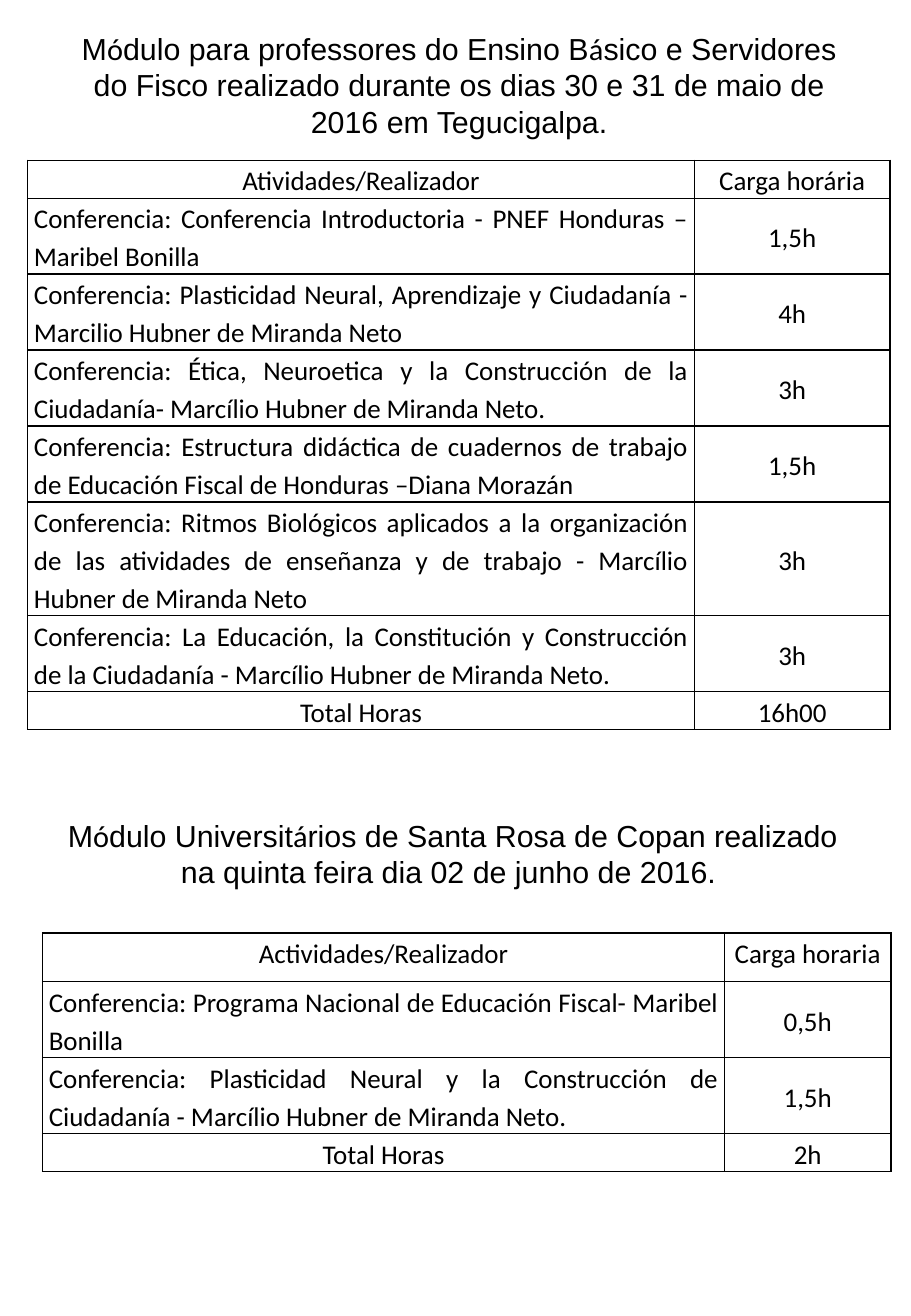
"""Build a page with two course-hour tables, each under its heading."""
from dataclasses import dataclass
from itertools import groupby

from lxml.etree import SubElement
from pptx import Presentation
from pptx.dml.color import RGBColor
from pptx.enum.text import MSO_ANCHOR, MSO_AUTO_SIZE, PP_ALIGN
from pptx.oxml.ns import qn
from pptx.util import Cm, Pt

BLACK = RGBColor(0, 0, 0)
HEADING_FONT, BODY_FONT = "Arial", "Calibri"
ACCENTED = "óá"
LINE_HEIGHT = 0.79


@dataclass
class Activity:
    text: str
    hours: str
    lines: int = 2


@dataclass
class Schedule:
    left: float
    top: float
    widths: tuple[float, float]
    header: tuple[str, str]
    header_height: float
    activities: list[Activity]
    total: str


MODULES = [
    Schedule(
        0.58, 3.35, (13.94, 4.09), ("Atividades/Realizador", "Carga horária"), LINE_HEIGHT,
        [
            Activity("Conferencia: Conferencia Introductoria - PNEF Honduras – Maribel Bonilla", "1,5h"),
            Activity("Conferencia: Plasticidad Neural, Aprendizaje y Ciudadanía - "
                     "Marcilio Hubner de Miranda Neto", "4h"),
            Activity("Conferencia: Ética, Neuroetica y la Construcción de la Ciudadanía- "
                     "Marcílio Hubner de Miranda Neto.", "3h"),
            Activity("Conferencia: Estructura didáctica de cuadernos de trabajo de "
                     "Educación Fiscal de Honduras –Diana Morazán", "1,5h"),
            Activity("Conferencia: Ritmos Biológicos aplicados a la organización de las atividades "
                     "de enseñanza y de trabajo - Marcílio Hubner de Miranda Neto", "3h", 3),
            Activity("Conferencia: La Educación, la Constitución y Construcción de la Ciudadanía - "
                     "Marcílio Hubner de Miranda Neto.", "3h"),
        ],
        "16h00",
    ),
    Schedule(
        0.89, 19.5, (14.26, 3.48), ("Actividades/Realizador", "Carga horaria"), 1.02,
        [
            Activity("Conferencia: Programa Nacional de Educación Fiscal- Maribel Bonilla", "0,5h"),
            Activity("Conferencia: Plasticidad Neural y la Construcción de Ciudadanía - "
                     "Marcílio Hubner de Miranda Neto.", "1,5h"),
        ],
        "2h",
    ),
]


def add_span(para, text: str, *, font: str, size: float) -> None:
    span = para.add_run()
    span.text = text
    span.font.name = font
    span.font.size = Pt(size)
    span.font.color.rgb = BLACK


def write_heading(box, text: str, *, left: float, top: float, width: float, height: float) -> None:
    box.left, box.top, box.width, box.height = Cm(left), Cm(top), Cm(width), Cm(height)
    frame = box.text_frame
    frame.word_wrap = True
    frame.auto_size = MSO_AUTO_SIZE.NONE
    frame.vertical_anchor = MSO_ANCHOR.MIDDLE
    para = frame.paragraphs[0]
    para.alignment = PP_ALIGN.CENTER
    for accented, letters in groupby(text, key=lambda letter: letter in ACCENTED):
        add_span(para, "".join(letters), font=BODY_FONT if accented else HEADING_FONT, size=18)


def add_borders(cell) -> None:
    properties = cell._tc.get_or_add_tcPr()
    for side in ("a:lnL", "a:lnR", "a:lnT", "a:lnB"):
        line = SubElement(properties, qn(side), w=str(Pt(1)))
        fill = SubElement(line, qn("a:solidFill"))
        SubElement(fill, qn("a:srgbClr"), val=str(BLACK))


def write_cell(cell, text: str, *, align=PP_ALIGN.CENTER, anchor=MSO_ANCHOR.TOP) -> None:
    add_borders(cell)
    cell.fill.background()
    cell.margin_left = cell.margin_right = Cm(0.13)
    cell.margin_top = cell.margin_bottom = 0
    cell.vertical_anchor = anchor
    para = cell.text_frame.paragraphs[0]
    para.alignment = align
    para.line_spacing = 1.15
    add_span(para, text, font=BODY_FONT, size=16)


def add_schedule(page, schedule: Schedule) -> None:
    heights = [schedule.header_height,
               *(activity.lines * LINE_HEIGHT for activity in schedule.activities), LINE_HEIGHT]
    table = page.shapes.add_table(
        len(heights), 2, Cm(schedule.left), Cm(schedule.top),
        Cm(sum(schedule.widths)), Cm(sum(heights))).table
    table.first_row = table.horz_banding = False
    for column, width in zip(table.columns, schedule.widths):
        column.width = Cm(width)
    for row, height in zip(table.rows, heights):
        row.height = Cm(height)
    for column, text in enumerate(schedule.header):
        write_cell(table.cell(0, column), text)
    for row, activity in enumerate(schedule.activities, start=1):
        write_cell(table.cell(row, 0), activity.text, align=PP_ALIGN.JUSTIFY)
        write_cell(table.cell(row, 1), activity.hours, anchor=MSO_ANCHOR.MIDDLE)
    last = len(heights) - 1
    write_cell(table.cell(last, 0), "Total Horas")
    write_cell(table.cell(last, 1), schedule.total, anchor=MSO_ANCHOR.MIDDLE)


def main() -> None:
    deck = Presentation()
    deck.slide_width, deck.slide_height = Cm(19.05), Cm(27.51)
    page = deck.slides.add_slide(deck.slide_layouts[5])
    write_heading(
        page.shapes.title,
        "Módulo para professores do Ensino Básico e Servidores do Fisco realizado "
        "durante os dias 30 e 31 de maio de 2016 em Tegucigalpa.",
        left=1.27, top=0.48, width=16.66, height=2.57)
    write_heading(
        page.shapes.add_textbox(0, 0, 0, 0),
        " Módulo Universitários de Santa Rosa de Copan realizado "
        "na quinta feira dia 02 de junho de 2016.",
        left=0.58, top=16.94, width=17.6, height=1.8)
    for schedule in MODULES:
        add_schedule(page, schedule)
    deck.save("out.pptx")


if __name__ == "__main__":
    main()
